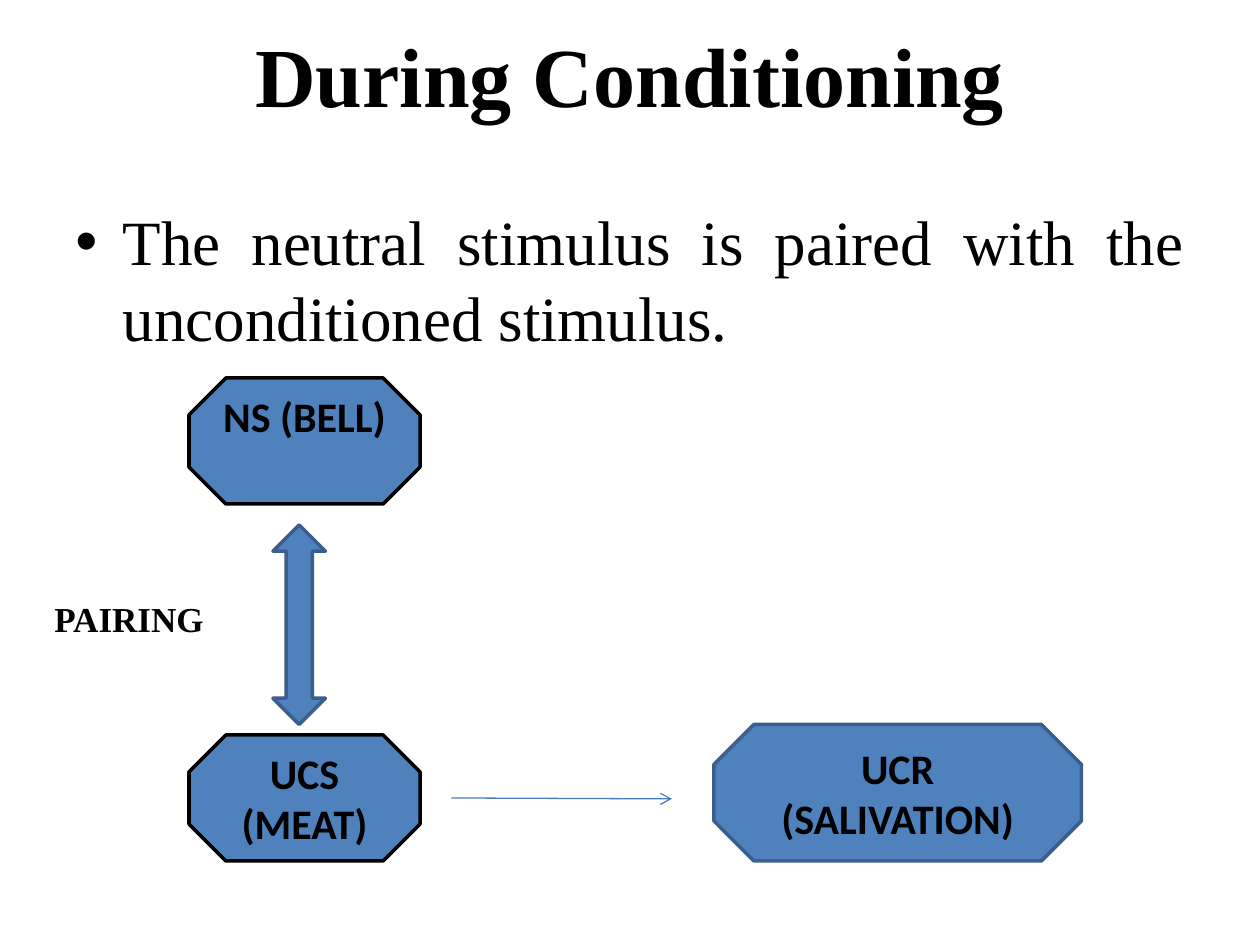
from typing import NamedTuple

from lxml.etree import SubElement
from pptx import Presentation
from pptx.dml.color import RGBColor
from pptx.enum.shapes import MSO_CONNECTOR as Conn, MSO_SHAPE as Kind
from pptx.enum.text import MSO_ANCHOR as Anchor, PP_ALIGN as Align
from pptx.oxml.ns import qn
from pptx.util import Pt

BLACK = RGBColor(0x00, 0x00, 0x00)
BLUE = RGBColor(0x4F, 0x81, 0xBD)
NAVY = RGBColor(0x3A, 0x5F, 0x8C)
SKY = RGBColor(0x4B, 0x7E, 0xBC)
SERIF = "Times New Roman"
SANS = "Calibri"


class Box(NamedTuple):
    left: float
    top: float
    width: float
    height: float


class Node(NamedTuple):
    lines: list[str]
    box: Box
    edge: RGBColor
    inset: tuple[float, float] = (3.6, 3.6)


def write(shape, lines: list[str], *, size: float, font: str = SERIF,
          bold: bool = True, align=Align.LEFT, anchor=Anchor.TOP,
          inset: tuple[float, float] = (3.6, 3.6), bullet: str = "") -> None:
    """Fill a shape with one paragraph per line."""
    frame = shape.text_frame
    frame.word_wrap = True
    frame.vertical_anchor = anchor
    frame.margin_top, frame.margin_bottom = map(Pt, inset)
    for i, line in enumerate(lines):
        para = frame.add_paragraph() if i else frame.paragraphs[0]
        para.alignment = align
        if bullet:
            props = para._p.get_or_add_pPr()
            props.set("marL", str(Pt(27)))
            props.set("indent", str(-Pt(27)))
            SubElement(props, qn("a:buFont")).set("typeface", "Arial")
            SubElement(props, qn("a:buChar")).set("char", bullet)
        run = para.add_run()
        run.text = line
        run.font.name, run.font.size, run.font.bold = font, Pt(size), bold
        run.font.color.rgb = BLACK


def add_text(slide, box: Box, lines: list[str], **style) -> None:
    write(slide.shapes.add_textbox(*map(Pt, box)), lines, **style)


def add_form(slide, kind: Kind, box: Box, edge: RGBColor):
    form = slide.shapes.add_shape(kind, *map(Pt, box))
    form.shadow.inherit = False
    form.fill.solid()
    form.fill.fore_color.rgb = BLUE
    form.line.color.rgb = edge
    form.line.width = Pt(2)
    return form


def add_node(slide, node: Node) -> None:
    form = add_form(slide, Kind.OCTAGON, node.box, node.edge)
    write(form, node.lines, size=24, font=SANS, align=Align.CENTER,
          anchor=Anchor.MIDDLE, inset=node.inset)


def add_arrow(slide, x1: float, y1: float, x2: float, y2: float) -> None:
    line = slide.shapes.add_connector(Conn.STRAIGHT, *map(Pt, (x1, y1, x2, y2)))
    line.line.color.rgb = SKY
    line.line.width = Pt(0.75)
    SubElement(line.line._get_or_add_ln(), qn("a:tailEnd")).set("type", "arrow")
    SubElement(line._element.spPr, qn("a:effectLst"))


NODES = [
    Node(["UCR", "(SALIVATION)"], Box(408, 414, 210, 78), NAVY),
    Node(["UCS (MEAT)"], Box(108, 420, 132, 72), BLACK),
    Node(["NS (BELL)"], Box(108, 216, 132, 72), BLACK, (0, 29)),
]


def main() -> None:
    deck = Presentation()
    deck.slide_width, deck.slide_height = Pt(720), Pt(540)
    slide = deck.slides.add_slide(deck.slide_layouts[6])

    # Heading and statement
    add_text(slide, Box(36, 10, 648, 90), ["During Conditioning"],
             size=48, align=Align.CENTER)
    add_text(slide, Box(36, 108, 648, 400),
             ["The neutral stimulus is paired with the unconditioned stimulus."],
             size=36, bold=False, align=Align.JUSTIFY, inset=(8, 3.6), bullet="•")

    # Stimuli and response
    for node in NODES:
        add_node(slide, node)

    # Links between them
    add_form(slide, Kind.UP_DOWN_ARROW, Box(156, 300, 30, 114), NAVY)
    add_arrow(slide, 258, 456, 384, 456.5)
    add_text(slide, Box(24, 318, 132, 55.5), ["PAIRING"],
             size=20, anchor=Anchor.BOTTOM, inset=(3.6, 8))

    deck.save("out.pptx")


if __name__ == "__main__":
    main()
